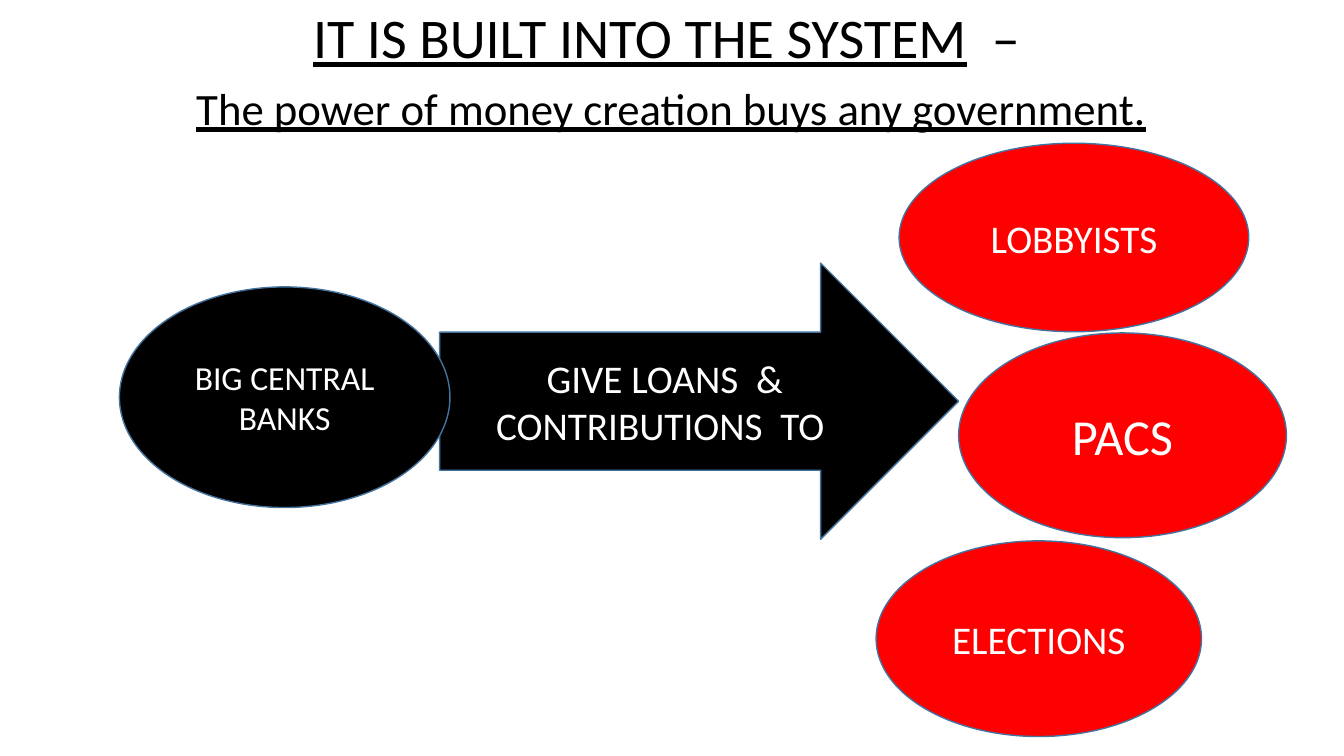
"""Build a slide on how money creation buys government."""
import pptx
import pptx.dml.color
import pptx.enum.shapes
import pptx.enum.text
import pptx.util

Cm = pptx.util.Cm
Pt = pptx.util.Pt
RGBColor = pptx.dml.color.RGBColor
Kind = pptx.enum.shapes.MSO_SHAPE
Align = pptx.enum.text.PP_ALIGN
Anchor = pptx.enum.text.MSO_ANCHOR

BLACK = RGBColor(0, 0, 0)
WHITE = RGBColor(255, 255, 255)
RED = RGBColor(255, 0, 0)
BLUE = RGBColor(0x43, 0x73, 0x9E)


def write(para, words, size, color=BLACK, under=False, font="Calibri"):
    run = para.add_run()
    run.text = words
    run.font.name = font
    run.font.size = Pt(size)
    run.font.color.rgb = color
    run.font.underline = under


class Board:
    def __init__(self, slide, edge=BLUE, width=1):
        self.slide = slide
        self.edge = edge
        self.width = width

    def shape(self, kind, box, fill, lines, size):
        item = self.slide.shapes.add_shape(kind, *map(Cm, box))
        item.shadow.inherit = False
        item.fill.solid()
        item.fill.fore_color.rgb = fill
        item.line.color.rgb = self.edge
        item.line.width = Pt(self.width)
        frame = item.text_frame
        frame.word_wrap = True
        frame.vertical_anchor = Anchor.MIDDLE
        for index, words in enumerate(lines):
            para = frame.add_paragraph() if index else frame.paragraphs[0]
            para.alignment = Align.CENTER
            write(para, words, size, color=WHITE)

    def label(self, box, wrap=False, fill=None, align=Align.LEFT):
        item = self.slide.shapes.add_textbox(*map(Cm, box))
        if fill is not None:
            item.fill.solid()
            item.fill.fore_color.rgb = fill
        item.text_frame.word_wrap = wrap
        para = item.text_frame.paragraphs[0]
        para.alignment = align
        return para


def main():
    deck = pptx.Presentation()
    deck.slide_width = Cm(33.87)
    deck.slide_height = Cm(19.05)
    board = Board(deck.slides.add_slide(deck.slide_layouts[6]))

    board.shape(Kind.RIGHT_ARROW, (11.08, 6.63, 13.08, 6.96), BLACK,
                ["GIVE LOANS  &", "CONTRIBUTIONS  TO "], 28)
    board.shape(Kind.OVAL, (3.01, 7.23, 8.33, 5.56), BLACK,
                ["BIG CENTRAL", "BANKS"], 24)
    buyers = [
        ("PACS", (24.16, 8.39, 8.26, 5.16), 36),
        ("LOBBYISTS", (22.66, 3.61, 8.81, 4.75), 28),
        ("ELECTIONS", (22.08, 13.63, 8.2, 4.93), 28),
    ]
    for name, box, size in buyers:
        board.shape(Kind.OVAL, box, RED, [name], size)

    claim = board.label((2.08, 1.9, 29.67, 1.63), wrap=True, fill=WHITE,
                        align=Align.CENTER)
    write(claim, "The power of money creation buys any government.", 32,
          under=True)
    title = board.label((7.64, -0.05, 18.52, 1.96))
    write(title, "IT IS BUILT INTO THE SYSTEM", 40, under=True)
    write(title, "  –", 40)

    deck.save("out.pptx")


if __name__ == "__main__":
    main()
